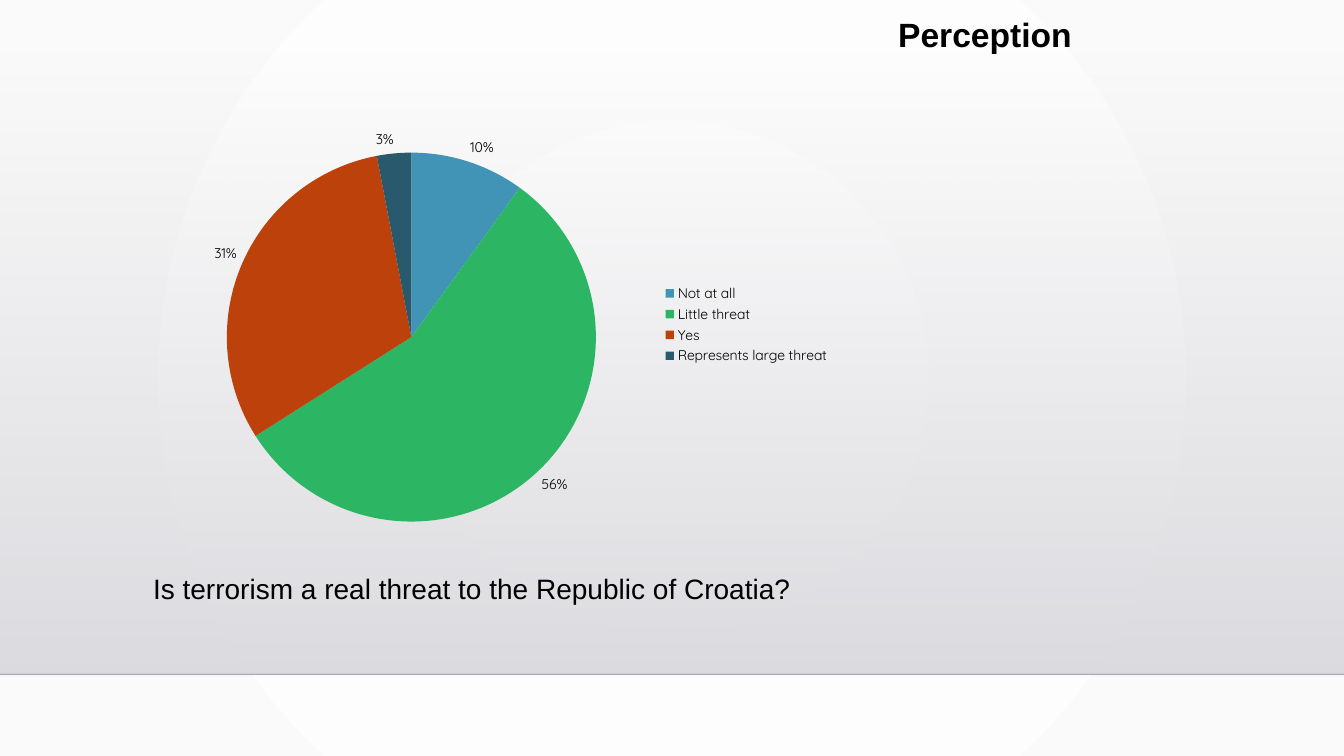
"""Build the slide on how people see the threat of terrorism."""
from dataclasses import dataclass

from lxml import etree
from pptx import Presentation, util as u
from pptx.chart import data as cd
from pptx.dml import color as col
from pptx.enum import chart as ch, shapes as sh, text as tx
from pptx.oxml import parse_xml
from pptx.oxml.ns import nsdecls, qn

HUES = {
    "black": "000000", "line": "000001", "white": "FFFFFF", "edge": "FAFAFA",
    "top": "DCDCE0", "base": "DEDEE2",
    "blue": "4294B6", "green": "2CB663", "rust": "BC410A", "teal": "28596D",
}


@dataclass
class Label:
    box: tuple[float, float, float, float]
    words: str
    size: int
    bold: bool = False


@dataclass
class Slice:
    name: str
    share: int
    hue: str


@dataclass
class Stop:
    hue: str
    alpha: int = 100


LABELS = [
    Label((8.81, 0.09, 1.94, 0.5), "Perception", 24, True),
    Label((1.42, 5.62, 6.57, 0.44),
          "Is terrorism a real threat to the Republic of Croatia?", 20),
]
SLICES = [
    Slice("Not at all", 10, "blue"),
    Slice("Little threat", 56, "green"),
    Slice("Yes", 31, "rust"),
    Slice("Represents large threat", 3, "teal"),
]


def shade(name: str) -> col.RGBColor:
    return col.RGBColor.from_string(HUES[name])


def style(font, face: str, size: int, bold: bool = False) -> None:
    font.name, font.size, font.bold = face, u.Pt(size), bold
    font.color.rgb = shade("black")


def blend(root, first: Stop, last: Stop, course: str) -> None:
    old = next(root.iter(qn("a:gradFill")))
    stops = "".join(
        f'<a:gs pos="{pos}"><a:srgbClr val="{HUES[stop.hue]}">'
        f'<a:alpha val="{stop.alpha * 1000}"/></a:srgbClr></a:gs>'
        for pos, stop in ((0, first), (100000, last)))
    new = parse_xml(f'<a:gradFill {nsdecls("a")} rotWithShape="1">'
                    f'<a:gsLst>{stops}</a:gsLst>{course}</a:gradFill>')
    old.getparent().replace(old, new)


def add_back(slide) -> None:
    slide.background.fill.gradient()
    blend(slide.element, Stop("white"), Stop("edge"),
          '<a:path path="circle"><a:fillToRect l="50000" t="50000" '
          'r="50000" b="50000"/></a:path>')
    floor = slide.shapes.add_shape(
        sh.MSO_SHAPE.RECTANGLE,
        *map(u.Inches, (0, 0.51, 13.33, 6.18)))
    floor.shadow.inherit = False
    floor.line.fill.background()
    floor.fill.gradient()
    blend(floor.element, Stop("top", 0), Stop("base"),
          '<a:lin ang="5400000" scaled="0"/>')
    rule = slide.shapes.add_connector(
        sh.MSO_CONNECTOR.STRAIGHT, *map(u.Inches, (0, 6.69, 13.33, 6.69)))
    rule.line.width = u.Pt(1)
    rule.line.color.rgb = shade("line")
    tint = next(rule.element.spPr.iter(qn("a:srgbClr")))
    etree.SubElement(tint, qn("a:alpha")).set("val", "20000")
    etree.SubElement(rule.element.spPr, qn("a:effectLst"))


def add_label(slide, label: Label) -> None:
    frame = slide.shapes.add_textbox(*map(u.Inches, label.box)).text_frame
    frame.word_wrap = False
    frame.auto_size = tx.MSO_AUTO_SIZE.SHAPE_TO_FIT_TEXT
    run = frame.paragraphs[0].add_run()
    run.text = label.words
    style(run.font, "Arial", label.size, label.bold)


def add_pie(slide, parts: list[Slice]) -> None:
    data = cd.CategoryChartData()
    data.categories = [part.name for part in parts]
    data.add_series("Series 1", [part.share for part in parts])
    pie = slide.shapes.add_chart(
        ch.XL_CHART_TYPE.PIE, *map(u.Inches, (1.42, 1.14, 6.91, 4.16)),
        data).chart
    pie.has_title = False
    style(pie.font, "Quicksand", 10)
    pie.has_legend = True
    pie.legend.position = ch.XL_LEGEND_POSITION.RIGHT
    pie.legend.include_in_layout = False
    style(pie.legend.font, "Quicksand", 10)
    plot = pie.plots[0]
    plot.vary_by_categories = True
    for spot, part in enumerate(parts):
        fill = plot.series[0].points[spot].format.fill
        fill.solid()
        fill.fore_color.rgb = shade(part.hue)
    tags = plot.series[0].data_labels
    tags.show_percentage, tags.show_value = True, False
    tags.position = ch.XL_LABEL_POSITION.OUTSIDE_END
    style(tags.font, "Quicksand", 10)
    place = {"x": 0.12, "y": 0.09, "w": 0.53, "h": 0.88}
    modes = "".join(f'<c:{side}Mode val="edge"/>' for side in "xy")
    sides = "".join(f'<c:{side} val="{val}"/>' for side, val in place.items())
    area = next(pie.element.iter(qn("c:plotArea")))
    for old in area.findall(qn("c:layout")):
        area.remove(old)
    area.insert(0, parse_xml(
        f'<c:layout {nsdecls("c")}><c:manualLayout>'
        f'<c:layoutTarget val="inner"/>{modes}{sides}'
        '</c:manualLayout></c:layout>'))


def main() -> None:
    deck = Presentation()
    deck.slide_width, deck.slide_height = u.Inches(13.33), u.Inches(7.5)
    slide = deck.slides.add_slide(deck.slide_layouts[6])
    add_back(slide)
    for label in LABELS:
        add_label(slide, label)
    add_pie(slide, SLICES)
    deck.save("out.pptx")


if __name__ == "__main__":
    main()
